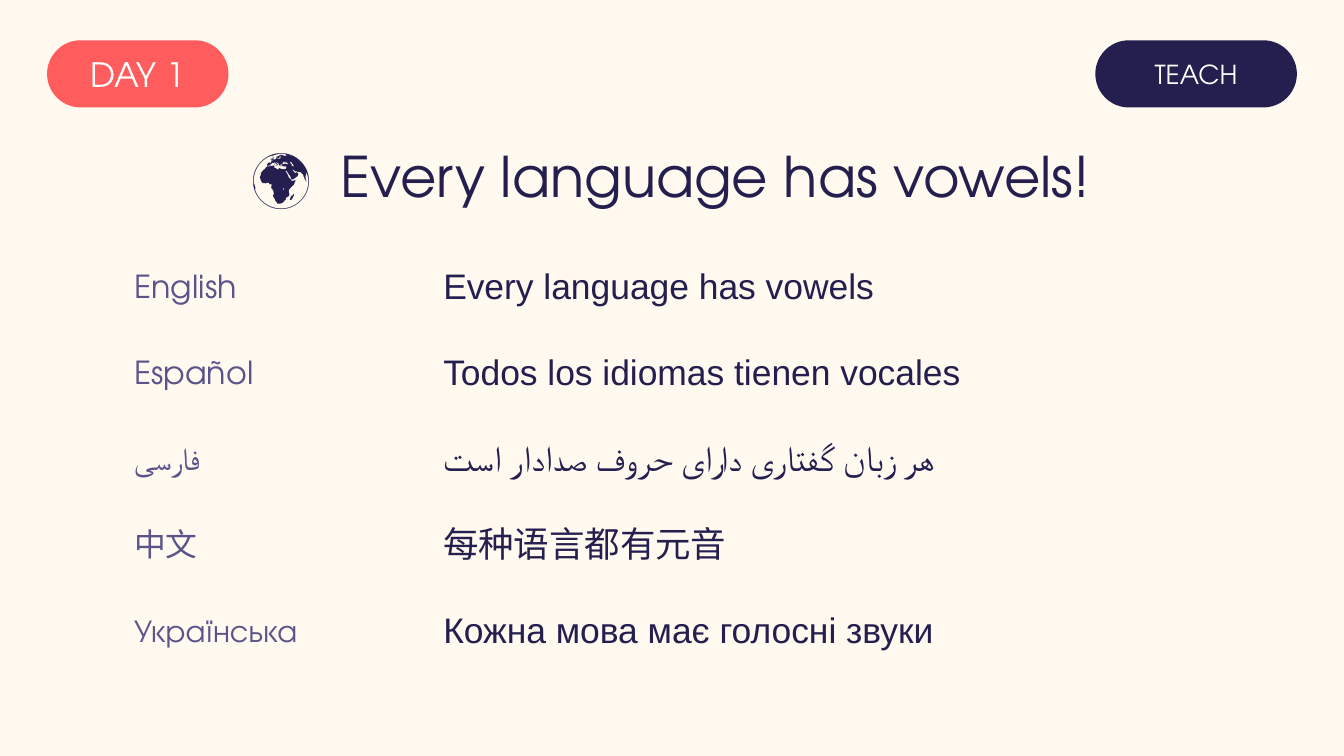
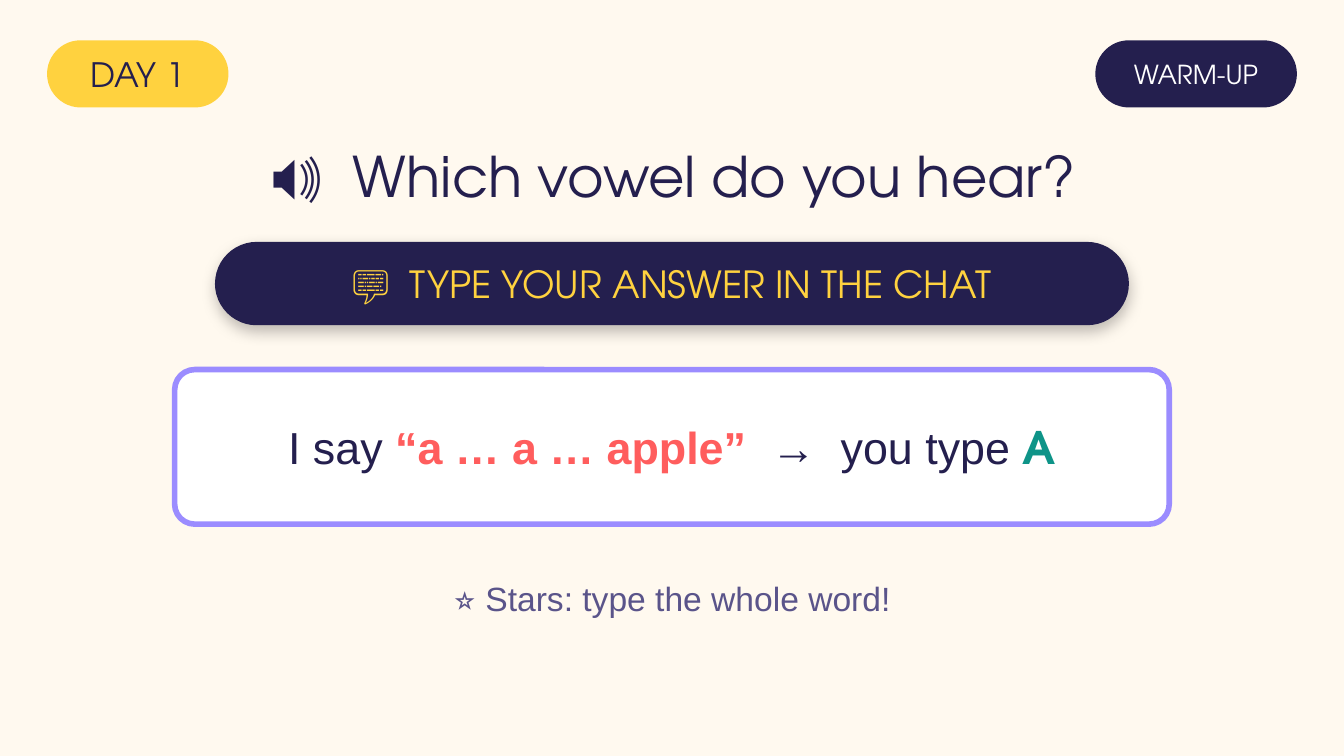
import pptx
import pptx.dml.color
import pptx.enum.shapes
import pptx.enum.text
import pptx.oxml
import pptx.oxml.ns
import pptx.util

Pt = pptx.util.Pt
ALIGN = pptx.enum.text.PP_ALIGN

CREAM, WHITE = "FFF9EF", "FFFFFF"
NAVY, MUTED, LILAC = "241F4E", "5A548A", "9B8CFF"
CORAL, YELLOW, TEAL = "FF5D5D", "FFD23F", "0E9488"
DISPLAY, BODY = "TeX Gyre Adventor", "Arial"
WIDTH, HEIGHT = 720, 405
MARGIN = 25.2

TRANSLATIONS = [
    ("English", "Every language has vowels"),
    ("Español", "Todos los idiomas tienen vocales"),
    ("فارسی", "هر زبان گفتاری دارای حروف صدادار است"),
    ("中文", "每种语言都有元音"),
    ("Українська", "Кожна мова має голосні звуки"),
]


def color(hex_code):
    return pptx.dml.color.RGBColor.from_string(hex_code)


class Lesson:
    """Holds the lesson style and the slide being filled."""

    def __init__(self):
        self.deck = pptx.Presentation()
        self.deck.slide_width = Pt(WIDTH)
        self.deck.slide_height = Pt(HEIGHT)
        self.slide = None

    def start(self, day, day_fill, day_ink, stage, title):
        self.slide = self.deck.slides.add_slide(self.deck.slide_layouts[6])
        background = self.slide.background.fill
        background.solid()
        background.fore_color.rgb = color(CREAM)
        self.pill(MARGIN, 21.6, 97.2, 36, day_fill, (day, 18, DISPLAY, day_ink))
        self.pill(WIDTH - MARGIN - 108, 21.6, 108, 36, NAVY, (stage, 14, DISPLAY, WHITE))
        self.label(0, 68.4, WIDTH, 50.4, (title, 30, DISPLAY, NAVY), align=ALIGN.CENTER)

    def set_text(self, frame, runs, align):
        frame.vertical_anchor = pptx.enum.text.MSO_ANCHOR.MIDDLE
        frame.word_wrap = True
        paragraph = frame.paragraphs[0]
        paragraph.alignment = align
        for words, size, face, ink, *bold in runs:
            run = paragraph.add_run()
            run.text = words
            run.font.size = Pt(size)
            run.font.name = face
            run.font.color.rgb = color(ink)
            run.font.bold = bool(bold)

    def label(self, left, top, width, height, *runs, align=ALIGN.LEFT):
        box = self.slide.shapes.add_textbox(Pt(left), Pt(top), Pt(width), Pt(height))
        self.set_text(box.text_frame, runs, align)

    def panel(self, left, top, width, height, fill, rounding, *runs):
        panel = self.slide.shapes.add_shape(
            pptx.enum.shapes.MSO_SHAPE.ROUNDED_RECTANGLE,
            Pt(left), Pt(top), Pt(width), Pt(height))
        panel.adjustments[0] = rounding
        panel.shadow.inherit = False
        panel.fill.solid()
        panel.fill.fore_color.rgb = color(fill)
        panel.line.fill.background()
        self.set_text(panel.text_frame, runs, ALIGN.CENTER)
        return panel

    def pill(self, left, top, width, height, fill, run):
        pill = self.panel(left, top, width, height, fill, 0.5, run)
        frame = pill.text_frame
        frame.margin_left = frame.margin_right = 0
        frame.margin_top = frame.margin_bottom = 0
        return pill

    def banner(self, left, top, width, height, fill, run):
        banner = self.pill(left, top, width, height, fill, run)
        effects = banner.element.spPr.find(pptx.oxml.ns.qn("a:effectLst"))
        effects.append(pptx.oxml.parse_xml(
            f'<a:outerShdw {pptx.oxml.ns.nsdecls("a")} blurRad="{Pt(8)}" '
            f'dist="{Pt(3)}" dir="5400000" algn="t" rotWithShape="0">'
            '<a:srgbClr val="000000"><a:alpha val="25000"/></a:srgbClr></a:outerShdw>'))

    def card(self, left, top, width, height, border, *runs):
        card = self.panel(left, top, width, height, WHITE, 0.13, *runs)
        card.line.color.rgb = color(border)
        card.line.width = Pt(3)


def teach_slide(lesson):
    lesson.start("DAY 1", CORAL, WHITE, "TEACH", "🌍  Every language has vowels!")
    for row, (language, sentence) in enumerate(TRANSLATIONS):
        top = 133.2 + row * 46.08
        lesson.label(64.8, top, 158.4, 39.6, (language, 17, DISPLAY, MUTED))
        lesson.label(230.4, top, 432, 39.6, (sentence, 19, BODY, NAVY))


def warm_up_slide(lesson):
    lesson.start("DAY 1", YELLOW, NAVY, "WARM-UP", "🔊  Which vowel do you hear?")
    lesson.banner(115.2, 129.6, 489.6, 44.64, NAVY,
                  ("💬  TYPE YOUR ANSWER IN THE CHAT", 20, DISPLAY, YELLOW))
    lesson.card(93.6, 198, 532.8, 82.8, LILAC,
                ("I say ", 24, BODY, NAVY),
                ("“a … a … apple”", 24, BODY, CORAL, True),
                ("  →  you type ", 24, BODY, NAVY),
                ("A", 24, DISPLAY, TEAL, True))
    lesson.label(0, 302.4, WIDTH, 36,
                 ("⭐ Stars: type the whole word!", 18, BODY, MUTED), align=ALIGN.CENTER)


def main():
    lesson = Lesson()
    teach_slide(lesson)
    warm_up_slide(lesson)
    lesson.deck.save("out.pptx")


if __name__ == "__main__":
    main()
